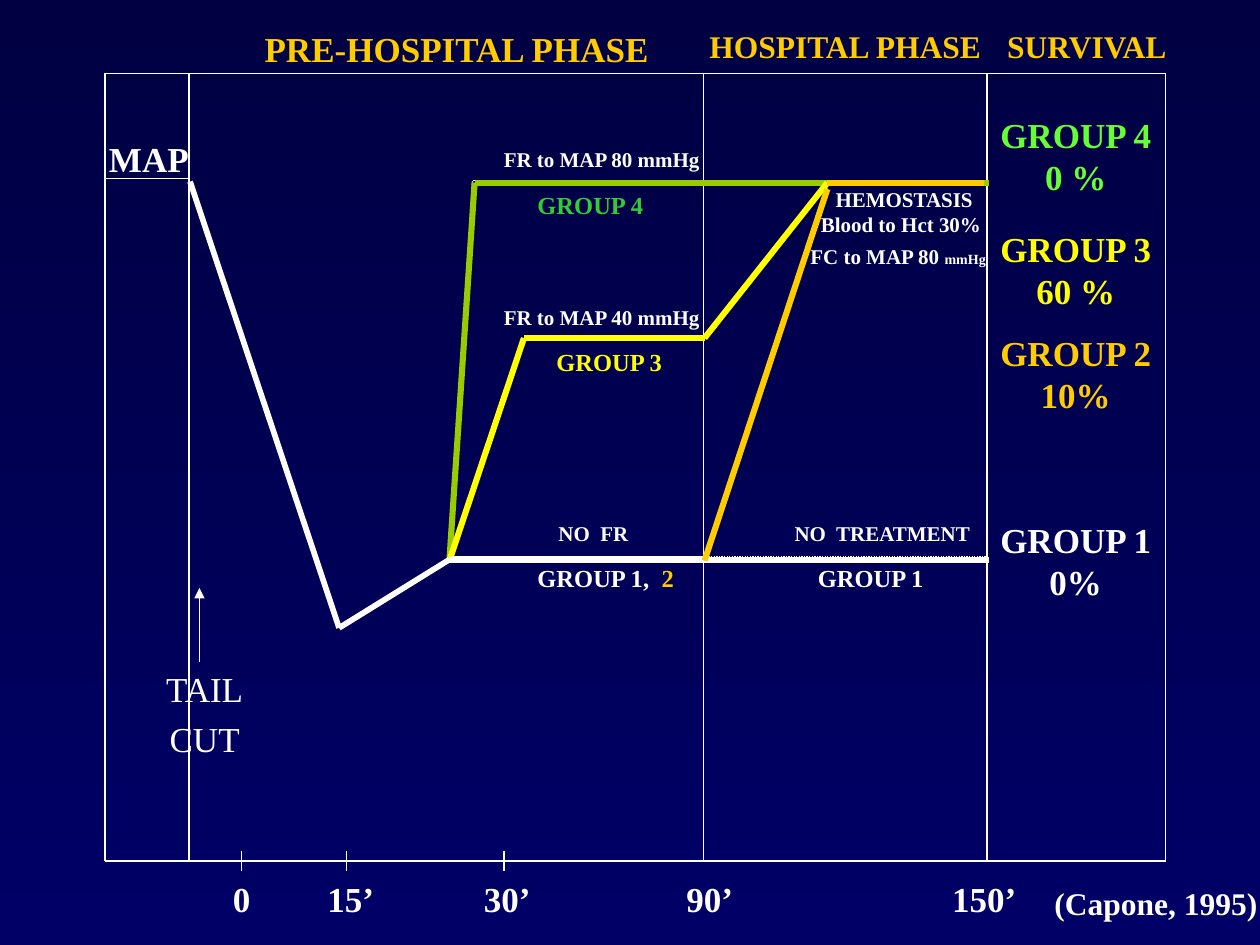
from itertools import pairwise

from lxml.etree import SubElement
from pptx import Presentation
from pptx.dml.color import RGBColor
from pptx.enum.dml import MSO_LINE_DASH_STYLE as Dash
from pptx.enum.shapes import MSO_CONNECTOR as Connector
from pptx.enum.text import MSO_ANCHOR as Anchor, MSO_AUTO_SIZE as AutoSize, PP_ALIGN as Align
from pptx.oxml.ns import qn
from pptx.util import Inches, Pt

WHITE = RGBColor(0xFF, 0xFF, 0xFF)
GOLD = RGBColor(0xFF, 0xCC, 0x00)
YELLOW = RGBColor(0xFF, 0xFF, 0x00)
OLIVE = RGBColor(0x99, 0xCC, 0x00)
GREEN = RGBColor(0x33, 0xCC, 0x33)
LIME = RGBColor(0x66, 0xFF, 0x33)
NIGHT = RGBColor(0x00, 0x00, 0x42)
NAVY = RGBColor(0x00, 0x00, 0x66)
FONT = "Times New Roman"

# The slide is a grid of 120 columns by 90 rows; all places are in cells.
COLUMNS, ROWS = 120, 90
CELL = Inches(10) / COLUMNS
LEFT, START, HOSPITAL, SURVIVAL, RIGHT = 10, 18, 67, 94, 111
TOP, BOTTOM = 7, 82
MAP_80, MAP_40, MAP_LOW = 17.2, 32.2, 53.2
CURVE = 3.5


def cells(*counts):
    return [round(count * CELL) for count in counts]


def trace(shapes, points, color=WHITE, width=0.75, dash=None):
    """Join the points with straight lines and return the last one."""
    for begin, end in pairwise(points):
        line = shapes.add_connector(Connector.STRAIGHT, *cells(*begin, *end))
        line.line.color.rgb = color
        line.line.width = Pt(width)
        if dash:
            line.line.dash_style = dash
        SubElement(line._element.spPr, qn("a:effectLst"))
    return line


def dotted(shapes, *points):
    trace(shapes, points, dash=Dash.ROUND_DOT)


def label(shapes, lines, place, size, color=WHITE, bold=True, align=Align.LEFT,
          gap=0, wrap=False, anchor=Anchor.TOP):
    """Add a text box and return its last paragraph."""
    frame = shapes.add_textbox(*cells(*place)).text_frame
    frame.word_wrap = wrap
    frame.auto_size = AutoSize.NONE if wrap else AutoSize.SHAPE_TO_FIT_TEXT
    frame.vertical_anchor = anchor
    for index, line in enumerate(lines):
        paragraph = frame.add_paragraph() if index else frame.paragraphs[0]
        paragraph.alignment = align
        if index and gap:
            paragraph.space_before = Pt(gap)
        paragraph.add_run().text = line
        font = paragraph.font
        font.name, font.size, font.bold = FONT, Pt(size), bold
        font.color.rgb = color
    return paragraph


def heading(shapes, text, left, width, size):
    label(shapes, [text], (left, 2, width, 6), size, GOLD, align=Align.CENTER, wrap=True)


def note(shapes, text, left, top, width):
    return label(shapes, [text], (left, top, width, 3.6), 12)


def group_name(shapes, text, left, top, color=WHITE, width=12.6):
    return label(shapes, [text], (left, top, width, 4), 14, color)


def outcome(shapes, group, survival, top, color):
    label(shapes, [group, survival], (SURVIVAL, top, 16.9, 9.2), 20, color,
          align=Align.CENTER, anchor=Anchor.MIDDLE)


def draw_background(slide):
    fill = slide.background.fill
    fill.gradient()
    fill.gradient_angle = 270
    for stop, color, position in zip(fill.gradient_stops, (NIGHT, NAVY), (0, 1)):
        stop.color.rgb = color
        stop.position = position


def draw_frame(shapes):
    for x in (LEFT, START, HOSPITAL, SURVIVAL, RIGHT):
        trace(shapes, [(x, TOP), (x, BOTTOM)])
    for y in (TOP, BOTTOM):
        trace(shapes, [(LEFT, y), (RIGHT, y)])
    trace(shapes, [(LEFT, 17), (START, 17)])
    heading(shapes, "PRE-HOSPITAL PHASE", 17, 53, 20)
    heading(shapes, "HOSPITAL PHASE", 62, 37, 18)
    heading(shapes, "SURVIVAL", 85, 37, 18)
    label(shapes, ["MAP"], (9.2, 12.5, 10.2, 5.2), 20)


def draw_time_axis(shapes):
    for x in (23, 33, 48):
        trace(shapes, [(x, BOTTOM - 1), (x, BOTTOM + 1)])
    times = [("0", 21, 4.2), ("15’", 30, 7.2), ("30’", 44.9, 7.2),
             ("90’", 64.2, 7.2), ("150’", 89.5, 8.8)]
    for time, left, width in times:
        label(shapes, [time], (left, 83, width, 5.2), 20)
    label(shapes, ["(Capone, 1995)"], (99.2, 83.6, 21.8, 4.8), 18,
          align=Align.CENTER, anchor=Anchor.MIDDLE)


def draw_tail_cut(shapes):
    label(shapes, ["TAIL", "CUT"], (11, 63, 17, 6), 20, bold=False,
          align=Align.CENTER, gap=4.6, wrap=True)
    arrow = trace(shapes, [(19, 63), (19, 56)], width=1)
    SubElement(arrow.line._get_or_add_ln(), qn("a:tailEnd"), type="triangle")


def draw_group_4(shapes):
    note(shapes, "Blood to Hct 30%", 77, 19.6, 17.8)
    target = note(shapes, "FC to MAP 80 ", 76, 22.6, 19.2)
    unit = target.add_run()
    unit.text = "mmHg"
    unit.font.size = Pt(8)
    trace(shapes, [(45, MAP_80), (HOSPITAL, MAP_80)])
    dotted(shapes, (43, MAP_LOW), (45, MAP_80))
    note(shapes, "FR to MAP 80 mmHg", 46.8, 13.4, 21.3)
    group_name(shapes, "GROUP 4", 50, 17.5, GREEN)
    dotted(shapes, (HOSPITAL, MAP_80), (89, MAP_80))
    note(shapes, "HEMOSTASIS", 78.4, 17.2, 15.6)
    outcome(shapes, "GROUP 4", "0 %", 10.2, LIME)
    trace(shapes, [(42.8, 53.4), (45.2, 17.4), (94.2, 17.4)], OLIVE, CURVE)


def draw_group_3(shapes):
    dotted(shapes, (43, MAP_LOW), (50, MAP_40))
    note(shapes, "FR to MAP 40 mmHg", 46.8, 28.4, 21.3)
    group_name(shapes, "GROUP 3", 51.8, 32.5, YELLOW)
    dotted(shapes, (HOSPITAL, MAP_40), (79, MAP_80))
    outcome(shapes, "GROUP 3", "60 %", 21.1, YELLOW)
    trace(shapes, [(42.8, 53.4), (49.9, MAP_40), (67.1, MAP_40), (78.8, 17.4)],
          YELLOW, CURVE)


def draw_group_1(shapes):
    trace(shapes, [(43, 53), (HOSPITAL, 53)])
    note(shapes, "NO  FR", 52, 49, 9.2)
    both = group_name(shapes, "GROUP 1,  ", 50, 53, width=15.6)
    second = both.add_run()
    second.text = "2"
    second.font.color.rgb = GOLD
    dotted(shapes, (66, 53), (SURVIVAL, 53))
    group_name(shapes, "GROUP 1", 76.7, 53)
    note(shapes, "NO  TREATMENT", 74.5, 49, 19.4)
    outcome(shapes, "GROUP 1", "0%", 48.8, WHITE)
    trace(shapes, [(18.1, 17.3), (32.3, 59.8), (42.8, 53.3)], width=3.25)
    trace(shapes, [(42.8, 53.3), (94.2, 53.3)], width=CURVE)


def draw_group_2(shapes):
    dotted(shapes, (HOSPITAL, MAP_LOW), (79, MAP_80))
    outcome(shapes, "GROUP 2", "10%", 31, GOLD)
    trace(shapes, [(67.1, 53.4), (78.8, 18)], GOLD, CURVE)
    trace(shapes, [(78.8, 17.4), (93.7, 17.4)], GOLD, CURVE)


def main():
    deck = Presentation()
    deck.slide_width, deck.slide_height = cells(COLUMNS, ROWS)
    slide = deck.slides.add_slide(deck.slide_layouts[6])
    draw_background(slide)
    for draw in (draw_frame, draw_time_axis, draw_tail_cut):
        draw(slide.shapes)
    for draw in (draw_group_4, draw_group_3, draw_group_1, draw_group_2):
        draw(slide.shapes.add_group_shape().shapes)
    deck.save("out.pptx")


if __name__ == "__main__":
    main()
